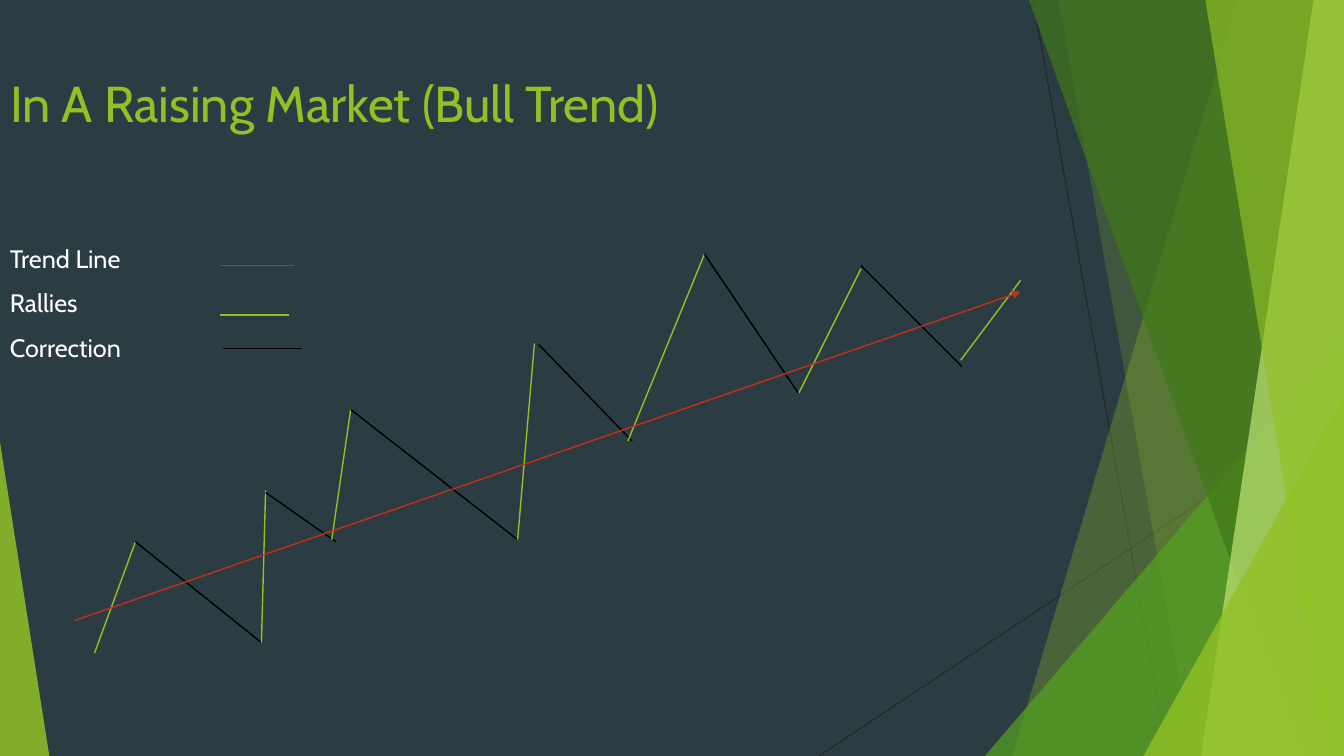
from lxml import etree
from pptx import Presentation
from pptx import util as u
from pptx.dml.color import RGBColor
from pptx.enum import shapes, text
from pptx.oxml.ns import qn

PX = 9525
WIDE, HIGH = 1280, 720
HUES = {"back": "2C3C43", "text": "FFFFFF", "rally": "90C226", "fall": "000000",
        "trend": "C42F1A", "rule": "262626", "lime": "90C226", "leaf": "54A021",
        "moss": "3F7819", "pale": "C0E474"}


def hue(name):
    return RGBColor.from_string(HUES[name])


def px(*vals):
    return [u.Emu(v * PX) for v in vals]


def assign(item, form):
    for name, val in form.items():
        setattr(item, name, val)


def paint(shape, name, alpha):
    """Fill a shape with a colour at alpha percent, without outline."""
    shape.shadow.inherit = False
    shape.line.fill.background()
    shape.fill.solid()
    shape.fill.fore_color.rgb = hue(name)
    clr = shape._element.spPr.find(qn("a:solidFill"))[0]
    etree.SubElement(clr, qn("a:alpha"), val=str(alpha * 1000))


def stroke(slide, box, ends, name, width=1, arrow=False):
    """Draw a line whose ends are relative to the box."""
    x, y = box[:2]
    a, b, c, d = ends
    line = slide.shapes.add_connector(
        shapes.MSO_CONNECTOR.STRAIGHT, *px(x + a, y + b, x + c, y + d))
    line.line.color.rgb = hue(name)
    line.line.width = u.Pt(width)
    prop = line._element.spPr
    if arrow:
        etree.SubElement(prop.find(qn("a:ln")), qn("a:tailEnd"), type="triangle")
    etree.SubElement(prop, qn("a:effectLst"))


def write(shape, box, lines, form, gap=0):
    """Place a text shape and fill it with one paragraph per line."""
    assign(shape, dict(zip(("left", "top", "width", "height"), px(*box))))
    frame = shape.text_frame
    assign(frame, {"word_wrap": True, "auto_size": text.MSO_AUTO_SIZE.NONE,
                   "vertical_anchor": text.MSO_ANCHOR.TOP})
    frame.text = "\n".join(lines)
    for i, para in enumerate(frame.paragraphs):
        assign(para, {"alignment": text.PP_ALIGN.LEFT, "line_spacing": 1.0,
                      "space_before": u.Pt(gap if i else 0)})
        for run in para.runs:
            assign(run.font, {"name": "Cabin", "size": u.Pt(form["size"])})
            run.font.color.rgb = hue(form["hue"])


def facet(slide, box, top, foot, name, alpha):
    """Fill from a slanted left edge to the right edge of the box."""
    x, y, w, h = box
    form = slide.shapes.build_freeform(x + top, y, scale=PX)
    form.add_line_segments([(x + w, y), (x + w, y + h), (x + foot, y + h)])
    paint(form.convert_to_shape(), name, alpha)


def wedge(slide, box, size, right, name, alpha):
    """Place a right triangle in the lower left or right corner of the box."""
    x, y, w, h = box
    wide, high = size
    left = x + w - wide if right else x
    shape = slide.shapes.add_shape(shapes.MSO_SHAPE.ISOSCELES_TRIANGLE,
                                   *px(left, y + h - high, wide, high))
    shape.adjustments[0] = int(right)
    paint(shape, name, alpha)


def decor(slide, box):
    for ends in ((204, 0, 332, 720), (500, 387, 0, 720)):
        stroke(slide, (box[0] + 780, box[1]), ends, "rule", 0.75)
    facet(slide, box, 1179, 964, "lime", 30)
    facet(slide, box, 1008, 1136, "lime", 20)
    wedge(slide, box, (342, 400), True, "leaf", 72)
    facet(slide, box, 980, 1239, "moss", 70)
    facet(slide, box, 1251, 1144, "pale", 70)
    facet(slide, box, 1148, 1265, "lime", 65)
    wedge(slide, box, (191, 343), True, "lime", 80)
    wedge(slide, box, (47, 299), False, "lime", 85)


def legend(slide, box):
    rows = (("Trend Line", "trend", (210, 26, 280, 26)),
            ("Rallies", "rally", (210, 73, 275, 73)),
            ("Correction", "fall", (212, 105, 287, 105)))
    label = slide.shapes.add_textbox(*px(*box))
    write(label, box, [row[0] for row in rows], {"size": 18, "hue": "text"}, 10)
    for _, name, ends in rows:
        stroke(slide, box, ends, name)


def market(slide, box):
    """Draw rallies and corrections in turn, then the trend line."""
    swings = ((19, 380, 58, 274), (58, 274, 178, 370),
              (178, 370, 182, 225), (182, 227, 249, 274),
              (245, 272, 263, 148), (263, 148, 422, 272),
              (422, 272, 438, 85), (442, 86, 531, 178),
              (527, 178, 600, 0), (600, 0, 689, 132),
              (690, 132, 749, 14), (749, 11, 845, 107),
              (844, 101, 901, 25))
    for i, ends in enumerate(swings):
        stroke(slide, box, ends, "fall" if i % 2 else "rally")
    stroke(slide, box, (0, 349, 901, 36), "trend", arrow=True)


def main():
    deck = Presentation()
    deck.slide_width, deck.slide_height = px(WIDE, HIGH)
    slide = deck.slides.add_slide(deck.slide_layouts[5])
    slide.background.fill.solid()
    slide.background.fill.fore_color.rgb = hue("back")
    decor(slide, (0, 0, WIDE, HIGH))
    write(slide.shapes.title, (0, 64, 902, 138),
          ["In A Raising Market (Bull Trend)"], {"size": 36, "hue": "lime"})
    legend(slide, (0, 227, 902, 407))
    market(slide, (71, 242, 901, 380))
    deck.save("out.pptx")


if __name__ == "__main__":
    main()
